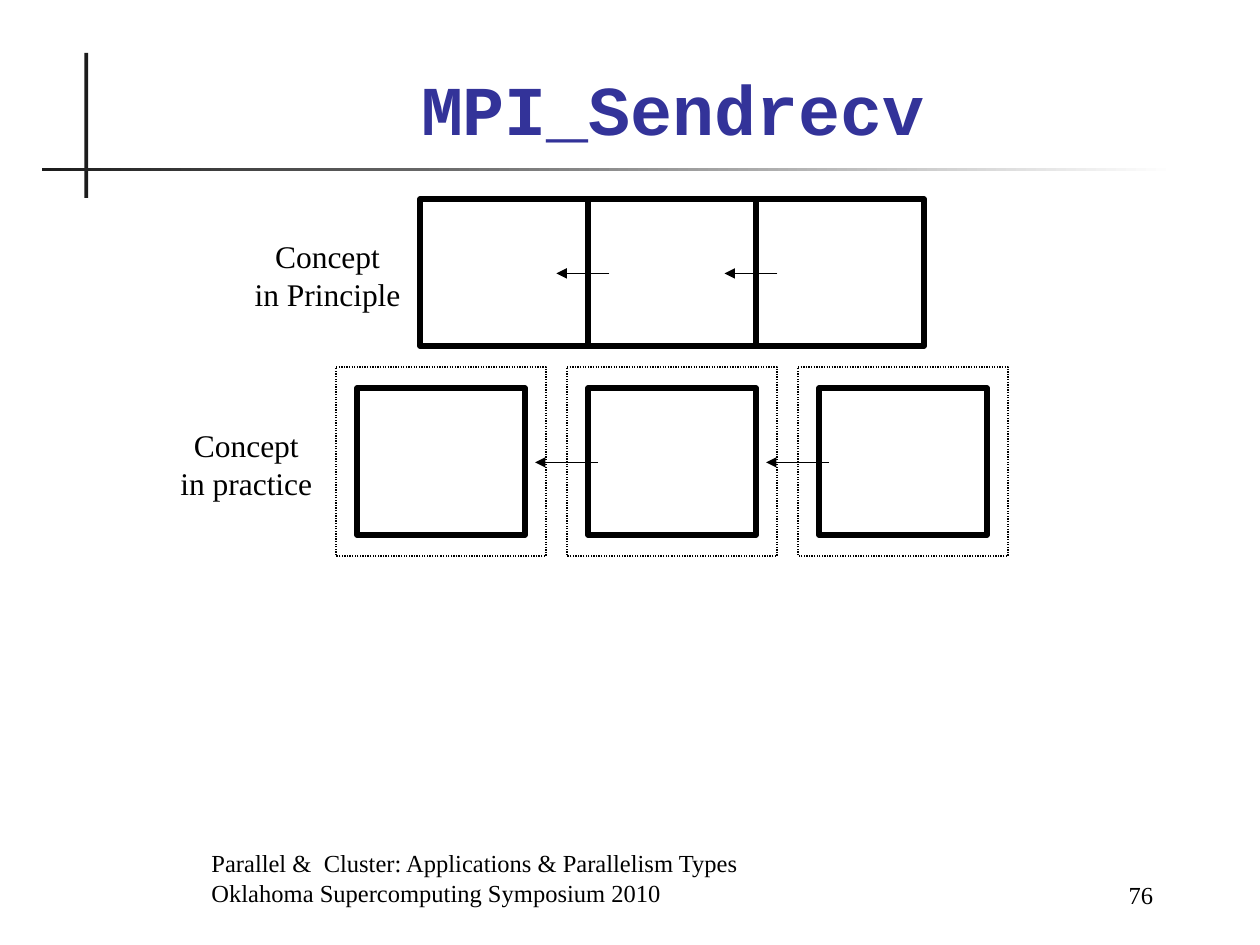
from typing import NamedTuple

from lxml.etree import SubElement
from pptx import Presentation
from pptx.dml.color import RGBColor
from pptx.enum.dml import MSO_LINE
from pptx.enum.shapes import MSO_CONNECTOR, MSO_SHAPE
from pptx.enum.text import MSO_ANCHOR, MSO_AUTO_SIZE, PP_ALIGN
from pptx.oxml.ns import qn
from pptx.util import Inches, Pt

COLORS = {"ink": "000000", "title": "333399", "rule": "1C1C1C", "paper": "FFFFFF"}
CELL_WIDTH, CELL_HEIGHT = 4 / 3, 7 / 6
HALO_MARGIN = 1 / 6


class Label(NamedTuple):
    lines: tuple[str, ...]
    left: float
    top: float
    width: float
    height: float
    size: int
    align: PP_ALIGN = PP_ALIGN.LEFT
    anchor: MSO_ANCHOR = MSO_ANCHOR.BOTTOM
    wrap: bool = True


class CellRow(NamedTuple):
    """Three cells at a fixed pitch, with arrows passing data leftwards."""
    left: float
    top: float
    pitch: float
    arrow_start: float  # arrow ends, measured from the sending cell's left edge
    arrow_end: float
    arrow_y: float
    has_halo: bool


LABELS = [
    Label(("Concept", "in Principle"), 1.92, 1.83, 1.36, 0.7, 18,
          PP_ALIGN.CENTER, MSO_ANCHOR.TOP, False),
    Label(("Concept", "in practice"), 1.33, 3.33, 1.25, 0.7, 18,
          PP_ALIGN.CENTER, MSO_ANCHOR.TOP, False),
    Label(("Parallel &  Cluster: Applications & Parallelism Types",
           "Oklahoma Supercomputing Symposium 2010"), 1.58, 6.75, 6.08, 0.5, 14),
    Label(("76",), 7.83, 6.77, 1.42, 0.5, 14, PP_ALIGN.RIGHT),
]
CELL_ROWS = [
    CellRow(10 / 3, 1.58, CELL_WIDTH, 0.17, -0.25, 2.17, False),
    CellRow(17 / 6, 3.08, 11 / 6, 0.08, -0.42, 3.67, True),
]


def color(name: str) -> RGBColor:
    return RGBColor.from_string(COLORS[name])


def add_rule(slide, left: float, top: float, width: float, height: float):
    rule = slide.shapes.add_shape(
        MSO_SHAPE.RECTANGLE, Inches(left), Inches(top), Inches(width), Inches(height))
    rule.shadow.inherit = False
    rule.line.fill.background()
    rule.fill.solid()
    rule.fill.fore_color.rgb = color("rule")
    return rule


def add_outline(slide, left: float, top: float, width: float, height: float,
                weight: float):
    outline = slide.shapes.add_shape(
        MSO_SHAPE.RECTANGLE, Inches(left), Inches(top), Inches(width), Inches(height))
    outline.shadow.inherit = False
    outline.fill.background()
    outline.line.color.rgb = color("ink")
    outline.line.width = Pt(weight)
    return outline


def add_arrow(slide, start: float, end: float, y: float) -> None:
    arrow = slide.shapes.add_connector(
        MSO_CONNECTOR.STRAIGHT, Inches(start), Inches(y), Inches(end), Inches(y))
    arrow.line.color.rgb = color("ink")
    arrow.line.width = Pt(0.75)
    SubElement(arrow.line._get_or_add_ln(), qn("a:tailEnd"), type="triangle")
    SubElement(arrow._element.spPr, qn("a:effectLst"))


def add_cell_row(slide, row: CellRow) -> None:
    lefts = [row.left + i * row.pitch for i in range(3)]
    for left in lefts:
        add_outline(slide, left, row.top, CELL_WIDTH, CELL_HEIGHT, 3)
        if row.has_halo:
            halo = add_outline(slide, left - HALO_MARGIN, row.top - HALO_MARGIN,
                               CELL_WIDTH + 2 * HALO_MARGIN,
                               CELL_HEIGHT + 2 * HALO_MARGIN, 0.75)
            halo.line.dash_style = MSO_LINE.ROUND_DOT
    for sender in lefts[1:]:
        add_arrow(slide, sender + row.arrow_start, sender + row.arrow_end, row.arrow_y)


def add_label(slide, label: Label) -> None:
    frame = slide.shapes.add_textbox(
        Inches(label.left), Inches(label.top),
        Inches(label.width), Inches(label.height)).text_frame
    frame.word_wrap = label.wrap
    frame.vertical_anchor = label.anchor
    if not label.wrap:
        frame.auto_size = MSO_AUTO_SIZE.SHAPE_TO_FIT_TEXT
    frame.text = "\n".join(label.lines)
    for paragraph in frame.paragraphs:
        paragraph.alignment = label.align
        paragraph.font.name = "Times New Roman"
        paragraph.font.size = Pt(label.size)
        paragraph.font.color.rgb = color("ink")


def set_title(slide, text: str) -> None:
    title = slide.shapes.title
    title.left, title.top = Inches(1.08), Inches(0.5)
    title.width, title.height = Inches(8.52), Inches(0.74)
    frame = title.text_frame
    frame.text = text
    frame.vertical_anchor = MSO_ANCHOR.BOTTOM
    frame.auto_size = MSO_AUTO_SIZE.NONE
    heading = frame.paragraphs[0]
    heading.alignment = PP_ALIGN.CENTER
    heading.font.name = "Courier New"
    heading.font.size = Pt(40)
    heading.font.bold = True
    heading.font.color.rgb = color("title")


def main() -> None:
    deck = Presentation()
    deck.slide_width, deck.slide_height = Inches(10), Inches(7.5)
    slide = deck.slides.add_slide(deck.slide_layouts[5])

    add_rule(slide, 0.67, 0.42, 0.03, 1.15)
    fading_rule = add_rule(slide, 0.33, 1.33, 9, 0.03)
    fading_rule.fill.gradient()
    fading_rule.fill.gradient_angle = 0
    for stop, name in zip(fading_rule.fill.gradient_stops, ("rule", "paper")):
        stop.color.rgb = color(name)

    set_title(slide, "MPI_Sendrecv")
    for row in CELL_ROWS:
        add_cell_row(slide, row)
    for label in LABELS:
        add_label(slide, label)
    deck.save("out.pptx")


if __name__ == "__main__":
    main()
